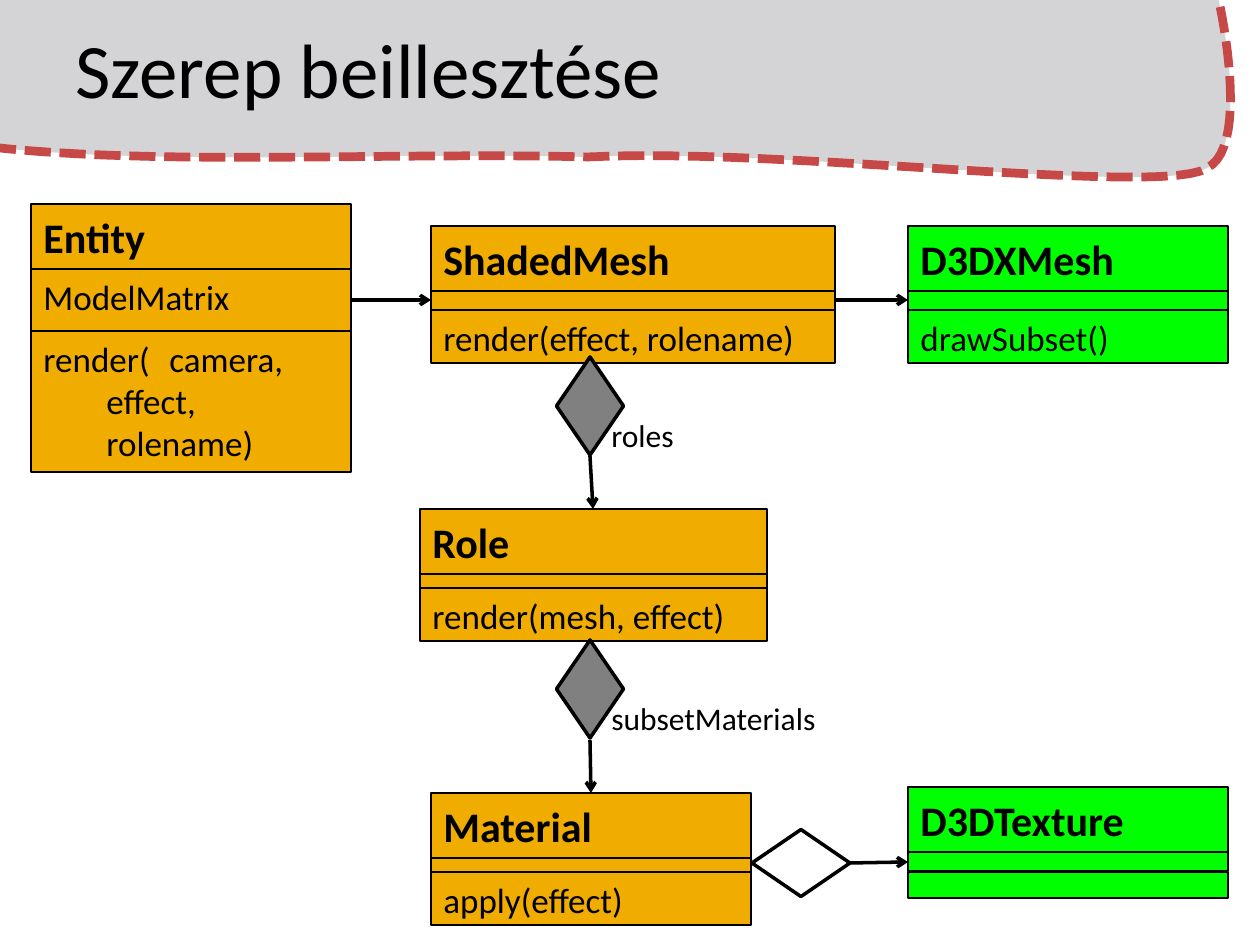
import pptx
import pptx.util
from lxml import etree
from pptx.dml.color import RGBColor
from pptx.enum.dml import MSO_LINE
from pptx.enum.shapes import MSO_CONNECTOR, MSO_SHAPE
from pptx.enum.text import MSO_ANCHOR, MSO_AUTO_SIZE, PP_ALIGN
from pptx.oxml.ns import qn

PX = 914400 / 126  # EMU in one px
FONT = "Calibri"
BLACK = RGBColor(0x00, 0x00, 0x00)
WHITE = RGBColor(0xFF, 0xFF, 0xFF)
GRAY = RGBColor(0x80, 0x80, 0x80)
ORANGE = RGBColor(0xF0, 0xAD, 0x00)
GREEN = RGBColor(0x00, 0xFF, 0x00)
BAND_GRAY = RGBColor(0xD4, 0xD4, 0xD6)
BAND_RED = RGBColor(0xC6, 0x48, 0x47)

HEADER_HEIGHT = 65
EMPTY_HEIGHT = 19

# Class boxes: left, top, width, fill, name,
# then attribute and method parts as (top, height, text)
CLASSES = [
    (31, 204, 320, ORANGE, "Entity", (269, 62, "ModelMatrix"),
     (331, 141, "render(\tcamera,\n\teffect,\n\trolename)")),
    (431, 793, 320, ORANGE, "Material", (858, EMPTY_HEIGHT, ""),
     (872, 53, "apply(effect)")),
    (908, 787, 320, GREEN, "D3DTexture", (852, EMPTY_HEIGHT, ""),
     (872, 26, "")),
    (431, 226, 404, ORANGE, "ShadedMesh", (291, EMPTY_HEIGHT, ""),
     (310, 53, "render(effect, rolename)")),
    (908, 226, 320, GREEN, "D3DXMesh", (291, EMPTY_HEIGHT, ""),
     (310, 53, "drawSubset()")),
    (420, 509, 347, ORANGE, "Role", (574, EMPTY_HEIGHT, ""),
     (588, 53, "render(mesh, effect)")),
]
# Diamonds: centre x, centre y, rotation, fill
DIAMONDS = [(590, 689, 90, GRAY), (801, 863, 0, WHITE), (590, 406, 90, GRAY)]
# Arrows: from x, y, to x, y
ARROWS = [
    (352, 300, 431, 300),
    (835, 300, 908, 300),
    (590, 740, 591, 793),
    (851, 863, 908, 862),
    (590, 456, 593, 509),
]
# Labels: left, top, width, text
LABELS = [(599, 693, 246, "subsetMaterials"), (599, 410, 93, "roles")]
# Lower edge of the title band: start, then control, control, end
BAND_START = (-10, 147)
BAND_CURVES = [
    ((160, 166), (394, 152), (588, 157)),
    ((779, 147), (1167, 197), (1207, 168)),
    ((1254, 146), (1218, -19), (1207, -42)),
]
BAND_STEPS = 24


def px(*lengths):
    return [pptx.util.Emu(round(length * PX)) for length in lengths]


def set_attributes(target, values):
    for name, value in values.items():
        setattr(target, name, value)


def write_text(shape, text, size, bold=False, **frame_values):
    frame = shape.text_frame
    set_attributes(frame, frame_values)
    frame.text = text
    for paragraph in frame.paragraphs:
        paragraph.alignment = PP_ALIGN.LEFT
        set_attributes(paragraph.font, {
            "name": FONT, "size": pptx.util.Pt(size), "bold": bold})
        paragraph.font.color.rgb = BLACK


def paint(shape, fill, line, width):
    shape.shadow.inherit = False
    shape.fill.solid()
    shape.fill.fore_color.rgb = fill
    shape.line.color.rgb = line
    shape.line.width = pptx.util.Pt(width)


def curve_points():
    start = BAND_START
    for curve in BAND_CURVES:
        for step in range(1, BAND_STEPS + 1):
            t = step / BAND_STEPS
            weights = ((1 - t) ** 3, 3 * t * (1 - t) ** 2,
                       3 * t ** 2 * (1 - t), t ** 3)
            corners = (start, *curve)
            yield tuple(sum(weight * corner[axis]
                            for weight, corner in zip(weights, corners))
                        for axis in (0, 1))
        start = curve[-1]


def add_title(slide, text):
    title = slide.shapes.title
    position = px(63, 0, 1134, 157)
    set_attributes(title, dict(zip(("left", "top", "width", "height"), position)))
    write_text(title, text, 44, vertical_anchor=MSO_ANCHOR.MIDDLE)
    title.text_frame.paragraphs[0].line_spacing = pptx.util.Pt(40)


def add_band(slide):
    builder = slide.shapes.build_freeform(*px(*BAND_START), scale=1.0)
    points = [*curve_points(), (-10, -42)]
    builder.add_line_segments([px(*point) for point in points], close=True)
    band = builder.convert_to_shape()
    paint(band, BAND_GRAY, BAND_RED, 5)
    band.line.dash_style = MSO_LINE.SQUARE_DOT
    slide.shapes.title.element.addprevious(band.element)


def add_class(slide, left, top, width, fill, name, attributes, methods):
    group = slide.shapes.add_group_shape()
    header = (top, HEADER_HEIGHT, name)
    for part in (header, attributes, methods):
        part_top, height, text = part
        box = group.shapes.add_shape(
            MSO_SHAPE.RECTANGLE, *px(left, part_top, width, height))
        paint(box, fill, BLACK, 1)
        if text:
            is_header = part is header
            write_text(
                box, text, 24 if is_header else 20, is_header, word_wrap=False,
                vertical_anchor=MSO_ANCHOR.MIDDLE if is_header else MSO_ANCHOR.TOP)


def add_diamond(slide, center_x, center_y, rotation, fill):
    width, height = 98, 67
    diamond = slide.shapes.add_shape(
        MSO_SHAPE.DIAMOND,
        *px(center_x - width / 2, center_y - height / 2, width, height))
    diamond.rotation = rotation
    paint(diamond, fill, BLACK, 2)


def add_arrow(slide, *ends):
    arrow = slide.shapes.add_connector(MSO_CONNECTOR.STRAIGHT, *px(*ends))
    arrow.line.color.rgb = BLACK
    arrow.line.width = pptx.util.Pt(2)
    properties = arrow.element.spPr
    etree.SubElement(properties.find(qn("a:ln")), qn("a:tailEnd"), type="arrow")
    etree.SubElement(properties, qn("a:effectLst"))


def add_label(slide, left, top, width, text):
    label = slide.shapes.add_textbox(*px(left, top, width, 50))
    write_text(label, text, 18, word_wrap=False,
               auto_size=MSO_AUTO_SIZE.SHAPE_TO_FIT_TEXT)


def main():
    presentation = pptx.Presentation()
    presentation.slide_width, presentation.slide_height = px(1260, 945)
    slide = presentation.slides.add_slide(presentation.slide_layouts[5])

    # Title on its band
    add_title(slide, "Szerep beillesztése")
    add_band(slide)

    # Class diagram
    for add_element, rows in (
            (add_class, CLASSES), (add_diamond, DIAMONDS),
            (add_arrow, ARROWS), (add_label, LABELS)):
        for row in rows:
            add_element(slide, *row)

    presentation.save("out.pptx")


if __name__ == "__main__":
    main()
